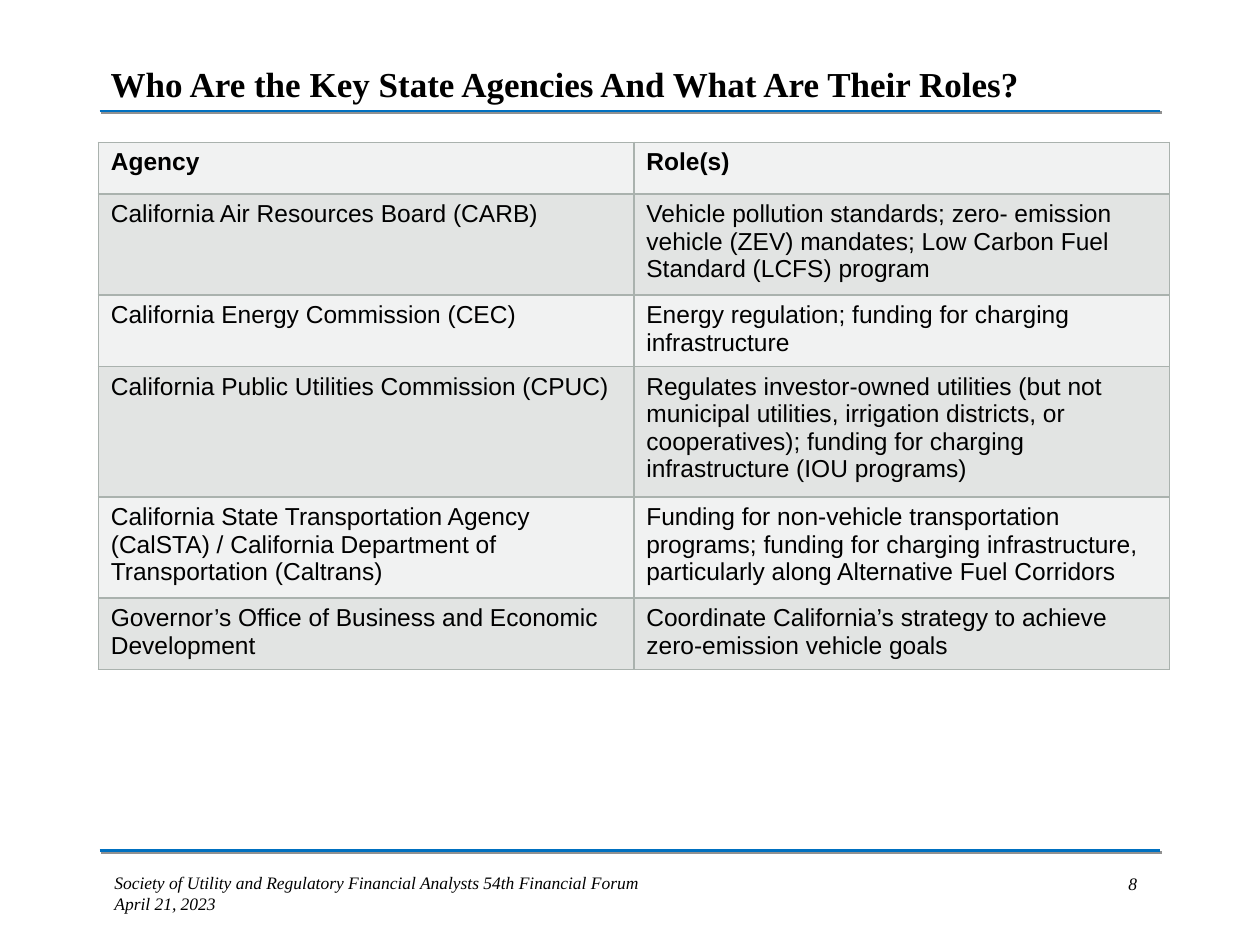
from lxml import etree
from pptx import Presentation
from pptx.dml.color import RGBColor
from pptx.enum.shapes import MSO_CONNECTOR
from pptx.enum.text import MSO_ANCHOR, PP_ALIGN
from pptx.oxml import parse_xml
from pptx.oxml.ns import nsdecls, qn
from pptx.util import Inches, Pt

COLORS = {
    "text": "000000",
    "rule": "0070C0",
    "shadow": "919191",
    "border": "AAB2AE",
    "light": "F1F2F2",
    "dark": "E2E4E3",
}
SERIF = "Times New Roman"
SANS = "Arial"

AGENCIES = [
    ("Agency", "Role(s)"),
    ("California Air Resources Board (CARB)",
     "Vehicle pollution standards; zero- emission vehicle (ZEV) mandates; "
     "Low Carbon Fuel Standard (LCFS) program"),
    ("California Energy Commission (CEC)",
     "Energy regulation; funding for charging infrastructure"),
    ("California Public Utilities Commission (CPUC)",
     "Regulates investor-owned utilities (but not municipal utilities, irrigation "
     "districts, or cooperatives); funding for charging infrastructure (IOU programs)"),
    ("California State Transportation Agency (CalSTA) / California Department of "
     "Transportation (Caltrans)",
     "Funding for non-vehicle transportation programs; funding for charging "
     "infrastructure, particularly along Alternative Fuel Corridors"),
    ("Governor’s Office of Business and Economic Development",
     "Coordinate California’s strategy to achieve zero-emission vehicle goals"),
]
ROW_HEIGHTS = [0.41, 0.8, 0.57, 1.03, 0.8, 0.57]


def rgb(name):
    return RGBColor.from_string(COLORS[name])


def format_text(tf, font, size, bold=False, italic=False):
    for p in tf.paragraphs:
        for r in p.runs:
            r.font.name = font
            r.font.size = Pt(size)
            r.font.bold = bold
            r.font.italic = italic
            r.font.color.rgb = rgb("text")


def add_text(slide, text, left, top, width, height):
    tf = slide.shapes.add_textbox(
        Inches(left), Inches(top), Inches(width), Inches(height)).text_frame
    tf.word_wrap = True
    tf.text = text
    return tf


def add_rule(slide, left, top, width):
    line = slide.shapes.add_connector(
        MSO_CONNECTOR.STRAIGHT, Inches(left), Inches(top),
        Inches(left + width), Inches(top))
    line.line.color.rgb = rgb("rule")
    line.line.width = Pt(1.5)
    line._element.spPr.append(parse_xml(
        f'<a:effectLst {nsdecls("a")}>'
        f'<a:outerShdw dist="{Pt(1.4)}" dir="2700000" algn="ctr" rotWithShape="0">'
        f'<a:srgbClr val="{COLORS["shadow"]}"/></a:outerShdw></a:effectLst>'))


def add_title(slide, left, top, width, height):
    tf = add_text(slide, "Who Are the Key State Agencies And What Are Their Roles?",
                  left, top, width, height)
    tf.vertical_anchor = MSO_ANCHOR.BOTTOM
    p = tf.paragraphs[0]
    p.line_spacing = 0.85
    p.space_before = Pt(1)
    format_text(tf, SERIF, 20, bold=True)
    add_rule(slide, left + 0.01, top + height, 8.42)


def set_borders(cell):
    tcPr = cell._tc.get_or_add_tcPr()
    for i, side in enumerate(("a:lnL", "a:lnR", "a:lnT", "a:lnB")):
        ln = etree.Element(qn(side), w=str(Pt(1)))
        fill = etree.SubElement(ln, qn("a:solidFill"))
        etree.SubElement(fill, qn("a:srgbClr"), val=COLORS["border"])
        tcPr.insert(i, ln)


def add_agency_table(slide, left, top, width):
    table = slide.shapes.add_table(
        len(AGENCIES), 2, Inches(left), Inches(top),
        Inches(width), Inches(sum(ROW_HEIGHTS))).table
    for column in table.columns:
        column.width = Inches(width / 2)
    for i, (texts, height) in enumerate(zip(AGENCIES, ROW_HEIGHTS)):
        table.rows[i].height = Inches(height)
        for j, text in enumerate(texts):
            cell = table.cell(i, j)
            cell.text_frame.text = text
            format_text(cell.text_frame, SANS, 14, bold=i == 0)
            cell.fill.solid()
            cell.fill.fore_color.rgb = rgb("dark" if i % 2 else "light")
            set_borders(cell)


def add_footer(slide, left, top, width):
    add_rule(slide, left, top, width)
    event = add_text(
        slide,
        "Society of Utility and Regulatory Financial Analysts 54th Financial Forum\n"
        "April 21, 2023",
        left + 0.02, top + 0.12, 7.33, 0.44)
    format_text(event, SERIF, 10, italic=True)
    number = add_text(slide, "8", left + 7.94, top + 0.13, 0.52, 0.27)
    number.paragraphs[0].alignment = PP_ALIGN.CENTER
    format_text(number, SERIF, 10, italic=True)


def main():
    prs = Presentation()
    prs.slide_width = Inches(10)
    prs.slide_height = Inches(7.5)
    slide = prs.slides.add_slide(prs.slide_layouts[6])
    add_footer(slide, 0.79, 6.75, 8.42)
    add_agency_table(slide, 0.78, 1.13, 8.5)
    add_title(slide, 0.78, 0, 8.5, 0.88)
    prs.save("out.pptx")


if __name__ == "__main__":
    main()
